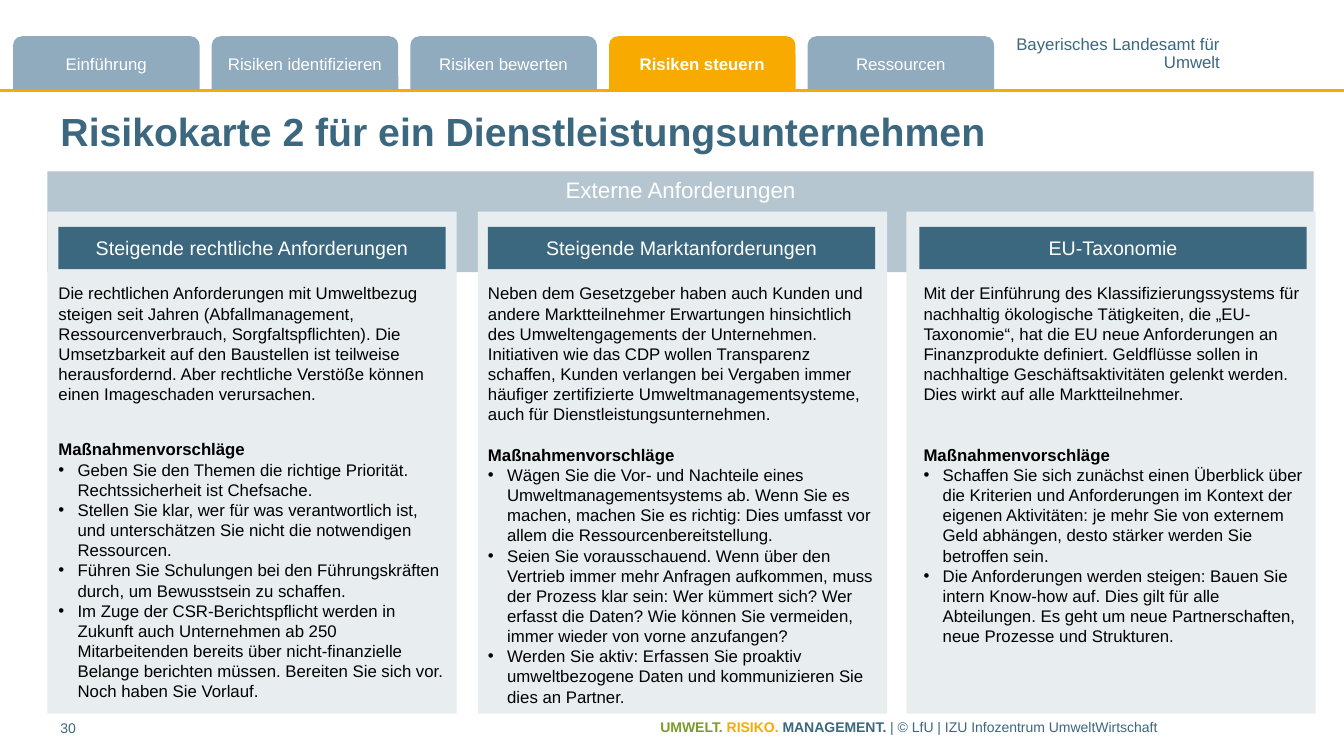
from lxml import etree
from pptx import Presentation
from pptx.dml.color import RGBColor
from pptx.enum.shapes import MSO_CONNECTOR, MSO_SHAPE as Shape
from pptx.enum.text import MSO_ANCHOR as Anchor, PP_ALIGN as Align
from pptx.oxml.ns import qn
from pptx.util import Inches, Pt

BLUE = RGBColor(0x3B, 0x68, 0x7F)
TAB_BLUE = RGBColor(0x90, 0xAB, 0xBE)
BAND_BLUE = RGBColor(0xB6, 0xC6, 0xD0)
PANEL_GREY = RGBColor(0xE8, 0xED, 0xF0)
ORANGE = RGBColor(0xF9, 0xAA, 0x00)
GREEN = RGBColor(0x7B, 0x9C, 0x2A)
WHITE = RGBColor(0xFF, 0xFF, 0xFF)
BLACK = RGBColor(0, 0, 0)

prs = Presentation()
prs.slide_width, prs.slide_height = Inches(13.33), Inches(7.5)
slide = prs.slides.add_slide(prs.slide_layouts[5])


def add_block(kind, left, top, width, height, fill, text="", size=12, bold=False):
    block = slide.shapes.add_shape(
        kind, Inches(left), Inches(top), Inches(width), Inches(height))
    block.shadow.inherit = False
    block.fill.solid()
    block.fill.fore_color.rgb = fill
    block.line.fill.background()
    if text:
        frame = block.text_frame
        frame.text = text
        frame.vertical_anchor = Anchor.MIDDLE
        line = frame.paragraphs[0]
        line.alignment = Align.CENTER
        set_font(line.font, size, WHITE, bold)
    return block


def set_font(font, size, color, bold=False):
    font.name, font.size, font.bold = "Arial", Pt(size), bold
    font.color.rgb = color


# Header: rule, publisher and navigation tabs
rule = slide.shapes.add_connector(
    MSO_CONNECTOR.STRAIGHT, 0, Inches(0.9), prs.slide_width, Inches(0.9))
rule.line.color.rgb = ORANGE
rule.line.width = Pt(2)
etree.SubElement(rule._element.spPr, qn("a:effectLst"))

publisher = slide.shapes.add_textbox(
    Inches(10.07), Inches(0.37), Inches(2.03), Inches(0.34)).text_frame
publisher.margin_left = publisher.margin_right = 0
publisher.margin_top = publisher.margin_bottom = 0
publisher.word_wrap = False
publisher.text = "Bayerisches Landesamt für\nUmwelt"
for line in publisher.paragraphs:
    line.alignment = Align.RIGHT
    line.line_spacing = 0.85
    set_font(line.font, 12, BLUE)

tabs = ["Einführung", "Risiken identifizieren", "Risiken bewerten",
        "Risiken steuern", "Ressourcen"]
for i, label in enumerate(tabs):
    active = label == "Risiken steuern"
    tab = add_block(Shape.ROUND_2_SAME_RECTANGLE, 0.13 + 1.97 * i, 0.36, 1.85, 0.53,
                    ORANGE if active else TAB_BLUE, label, 12, active)
    tab.text_frame.margin_left = tab.text_frame.margin_right = Inches(0.04)

# Title
title = slide.shapes.title
title.left, title.top = Inches(0.6), Inches(1.02)
title.width, title.height = Inches(12.31), Inches(0.55)
title.text_frame.text = "Risikokarte 2 für ein Dienstleistungsunternehmen"
title.text_frame.margin_left = title.text_frame.margin_right = 0
title.text_frame.vertical_anchor = Anchor.MIDDLE
title.text_frame.paragraphs[0].alignment = Align.LEFT
set_font(title.text_frame.paragraphs[0].font, 28, BLUE, True)

# Band behind the three columns
band = add_block(Shape.RECTANGLE, 0.47, 1.7, 12.56, 1, BAND_BLUE,
                 "Externe Anforderungen", 16)
band.text_frame.vertical_anchor = Anchor.TOP

# Columns: panel, heading and text lefts, gap before the measures, wording
columns = [
    (0.47, 0.58, 0.58, 25, "Steigende rechtliche Anforderungen",
     "Die rechtlichen Anforderungen mit Umweltbezug steigen seit Jahren "
     "(Abfallmanagement, Ressourcenverbrauch, Sorgfaltspflichten). Die Umsetzbarkeit "
     "auf den Baustellen ist teilweise herausfordernd. Aber rechtliche Verstöße "
     "können einen Imageschaden verursachen.",
     ["Geben Sie den Themen die richtige Priorität. Rechtssicherheit ist Chefsache.",
      "Stellen Sie klar, wer für was verantwortlich ist, und unterschätzen Sie nicht "
      "die notwendigen Ressourcen.",
      "Führen Sie Schulungen bei den Führungskräften durch, um Bewusstsein zu schaffen.",
      "Im Zuge der CSR-Berichtspflicht werden in Zukunft auch Unternehmen ab 250 "
      "Mitarbeitenden bereits über nicht-finanzielle Belange berichten müssen. "
      "Bereiten Sie sich vor. Noch haben Sie Vorlauf."]),
    (4.74, 4.84, 4.84, 14.4, "Steigende Marktanforderungen",
     "Neben dem Gesetzgeber haben auch Kunden und andere Marktteilnehmer Erwartungen "
     "hinsichtlich des Umweltengagements der Unternehmen. Initiativen wie das CDP "
     "wollen Transparenz schaffen, Kunden verlangen bei Vergaben immer häufiger "
     "zertifizierte Umweltmanagementsysteme, auch für Dienstleistungsunternehmen.",
     ["Wägen Sie die Vor- und Nachteile eines Umweltmanagementsystems ab. Wenn Sie es "
      "machen, machen Sie es richtig: Dies umfasst vor allem die "
      "Ressourcenbereitstellung.",
      "Seien Sie vorausschauend. Wenn über den Vertrieb immer mehr Anfragen aufkommen, "
      "muss der Prozess klar sein: Wer kümmert sich? Wer erfasst die Daten? Wie können "
      "Sie vermeiden, immer wieder von vorne anzufangen?",
      "Werden Sie aktiv: Erfassen Sie proaktiv umweltbezogene Daten und kommunizieren "
      "Sie dies an Partner."]),
    (8.99, 9.12, 9.16, 28.8, "EU-Taxonomie",
     "Mit der Einführung des Klassifizierungssystems für nachhaltig ökologische "
     "Tätigkeiten, die „EU-Taxonomie“, hat die EU neue Anforderungen an "
     "Finanzprodukte definiert. Geldflüsse sollen in nachhaltige Geschäftsaktivitäten "
     "gelenkt werden. Dies wirkt auf alle Marktteilnehmer.",
     ["Schaffen Sie sich zunächst einen Überblick über die Kriterien und Anforderungen "
      "im Kontext der eigenen Aktivitäten: je mehr Sie von externem Geld abhängen, "
      "desto stärker werden Sie betroffen sein.",
      "Die Anforderungen werden steigen: Bauen Sie intern Know-how auf. Dies gilt für "
      "alle Abteilungen. Es geht um neue Partnerschaften, neue Prozesse und "
      "Strukturen."]),
]
for panel_left, heading_left, text_left, gap, heading, intro, measures in columns:
    add_block(Shape.RECTANGLE, panel_left, 2.1, 4.06, 4.98, PANEL_GREY)
    add_block(Shape.RECTANGLE, heading_left, 2.25, 3.84, 0.42, BLUE, heading, 14)

    body = slide.shapes.add_textbox(
        Inches(text_left), Inches(2.76), Inches(3.84), Inches(4.29)).text_frame
    body.word_wrap = True
    body.margin_left = body.margin_right = 0
    body.text = "\n".join([intro, "Maßnahmenvorschläge", *measures])
    for i, line in enumerate(body.paragraphs):
        if i == 1:
            line.space_before = Pt(gap)
        elif i > 1:
            indent = line._p.get_or_add_pPr()
            indent.set("marL", str(Inches(0.19)))
            indent.set("indent", str(Inches(-0.19)))
            etree.SubElement(indent, qn("a:buFont"), typeface="Arial")
            etree.SubElement(indent, qn("a:buChar"), char="•")
        set_font(line.font, 12, BLACK, i == 1)

# Footer: page number and credit line
page = slide.shapes.add_textbox(
    Inches(0.6), Inches(7.09), Inches(0.7), Inches(0.31)).text_frame
page.margin_left = page.margin_right = 0
page.text = "30"
set_font(page.paragraphs[0].font, 10, BLUE)

footer = slide.shapes.add_textbox(
    Inches(6.55), Inches(7.08), Inches(6.36), Inches(0.31)).text_frame
footer.word_wrap = True
footer.margin_left = footer.margin_right = 0
for words, color, bold in [("UMWELT. ", GREEN, True), ("RISIKO. ", ORANGE, True),
                           ("MANAGEMENT. ", BLUE, True),
                           ("| © LfU | IZU Infozentrum UmweltWirtschaft", BLUE, False)]:
    run = footer.paragraphs[0].add_run()
    run.text = words
    set_font(run.font, 10, color, bold)

prs.save("out.pptx")
